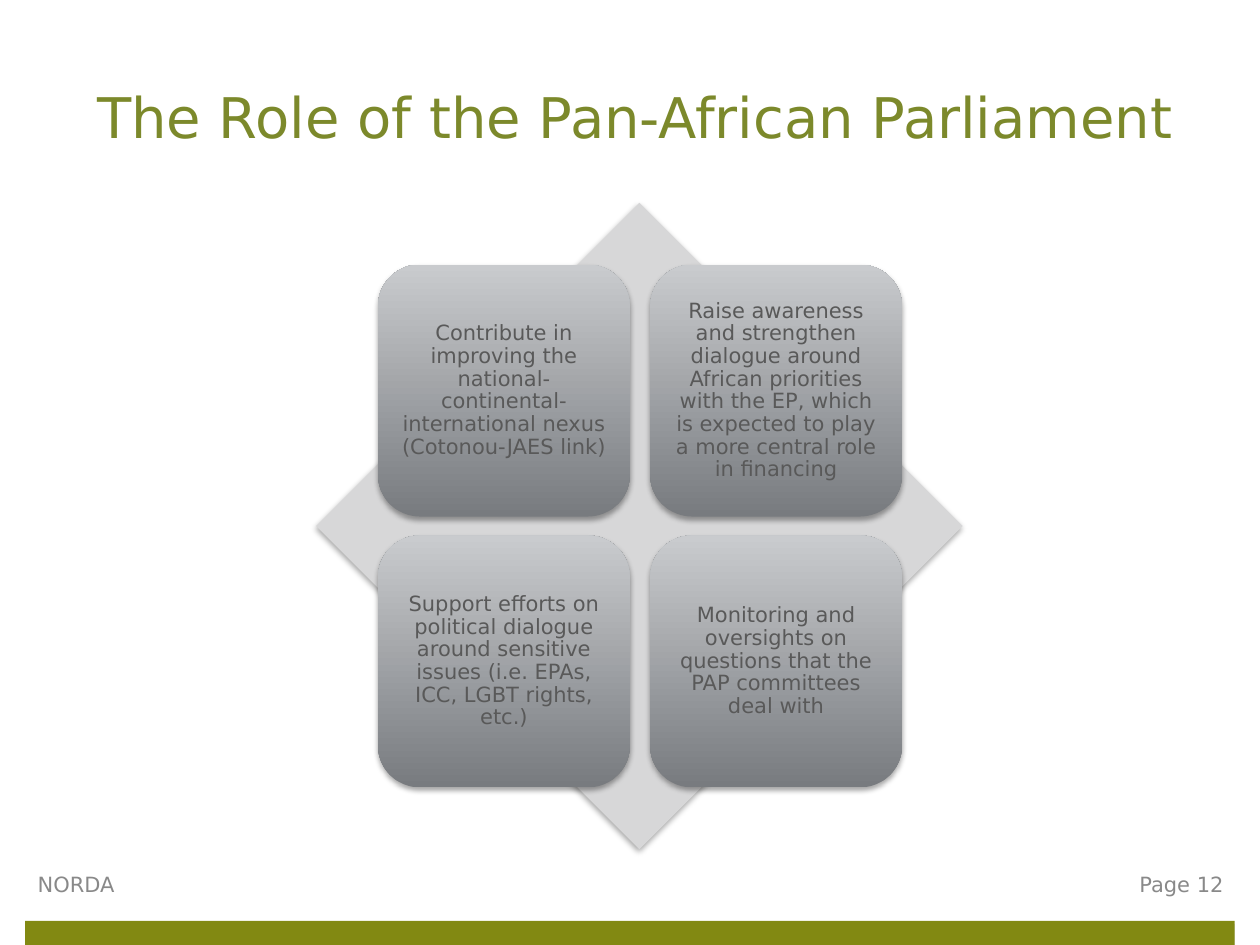
from lxml.etree import SubElement
from pptx import Presentation
from pptx.dml.color import RGBColor
from pptx.enum.shapes import MSO_SHAPE
from pptx.enum.text import MSO_ANCHOR, PP_ALIGN
from pptx.oxml.ns import qn
from pptx.util import Inches, Pt

FONT = "DejaVu Sans"
HUES = {"olive": "828912", "title": "7C892B", "pale": "D7D7D8",
        "dark": "787B7F", "light": "C9CBCE", "text": "595959",
        "foot": "898989", "black": "000000", "gray": "808080"}


def add_shade(shape, hue, blur):
    shape.shadow.inherit = False
    shape.line.fill.background()
    effects = shape._element.spPr.find(qn("a:effectLst"))
    shade = SubElement(effects, qn("a:outerShdw"), blurRad=str(Pt(blur)),
                       dist=str(Pt(1.8)), dir="5400000", rotWithShape="0")
    color = SubElement(shade, qn("a:srgbClr"), val=HUES[hue])
    SubElement(color, qn("a:alpha"), val="35000")


def add_text(shape, text, size, hue, align):
    frame = shape.text_frame
    frame.word_wrap = True
    frame.vertical_anchor = MSO_ANCHOR.MIDDLE
    para = frame.paragraphs[0]
    para.alignment = align
    run = para.add_run()
    run.text = text
    run.font.name = FONT
    run.font.size = Pt(size)
    run.font.color.rgb = RGBColor.from_string(HUES[hue])
    return frame


deck = Presentation()
deck.slide_width, deck.slide_height = Inches(10), Inches(7.5)
slide = deck.slides.add_slide(deck.slide_layouts[5])
shapes = slide.shapes

title = shapes.title
title.left, title.top = Inches(0.67), Inches(0.3)
title.width, title.height = Inches(8.83), Inches(1.25)
add_text(title, "The Role of the Pan-African Parliament", 32, "title", PP_ALIGN.LEFT)

bar = shapes.add_shape(MSO_SHAPE.RECTANGLE, Inches(0.2), Inches(7.31),
                       Inches(9.6), Inches(0.2))
diamond = shapes.add_shape(MSO_SHAPE.DIAMOND, Inches(2.51), Inches(1.61),
                           Inches(5.13), Inches(5.13))
for shape, hue, shade, blur in ((bar, "olive", "gray", 0),
                                (diamond, "pale", "black", 3.1)):
    shape.fill.solid()
    shape.fill.fore_color.rgb = RGBColor.from_string(HUES[hue])
    add_shade(shape, shade, blur)

roles = [
    "Contribute in improving the national-continental-international nexus (Cotonou-JAES link)",
    "Raise awareness and strengthen dialogue around African priorities with the EP, "
    "which is expected to play a more central role in financing",
    "Support efforts on political dialogue around sensitive issues "
    "(i.e. EPAs, ICC, LGBT rights, etc.)",
    "Monitoring and oversights on questions that the PAP committees deal with",
]
for i, role in enumerate(roles):
    row, col = divmod(i, 2)
    card = shapes.add_shape(MSO_SHAPE.ROUNDED_RECTANGLE, Inches(3 + col * 2.16),
                            Inches(2.1 + row * 2.15), Inches(2), Inches(2))
    card.fill.gradient()
    card.fill.gradient_angle = 90
    for stop, hue in zip(card.fill.gradient_stops, ("dark", "light")):
        stop.color.rgb = RGBColor.from_string(HUES[hue])
    add_shade(card, "black", 3.1)
    frame = add_text(card, role, 12, "text", PP_ALIGN.CENTER)
    frame.margin_left = frame.margin_right = Inches(0.05)
    frame.margin_top = frame.margin_bottom = Inches(0.05)
    frame.paragraphs[0].line_spacing = 0.9

for left, width, text, align in ((0.2, 2.05, "NORDA", PP_ALIGN.LEFT),
                                 (8.31, 1.5, "Page 12", PP_ALIGN.RIGHT)):
    foot = shapes.add_textbox(Inches(left), Inches(6.82), Inches(width), Inches(0.4))
    add_text(foot, text, 12, "foot", align)

deck.save("out.pptx")
